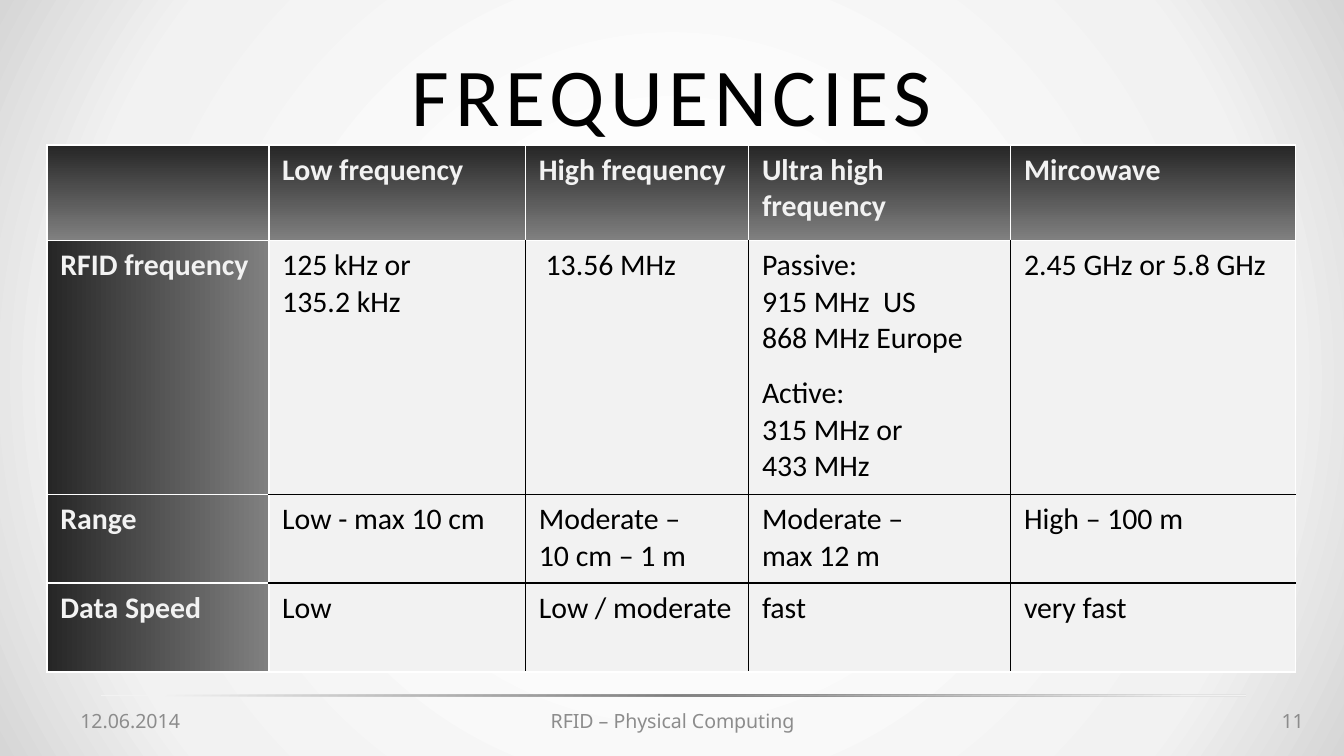
"""Build the slide that compares RFID frequency bands."""
from lxml import etree
from pptx import Presentation
from pptx import util as u
from pptx.dml.color import RGBColor
from pptx.enum import shapes, text
from pptx.oxml import ns

TITLE = "FREQUENCIES"
ROWS = [
    ["", "Low frequency", "High frequency", "Ultra high frequency", "Mircowave"],
    ["RFID frequency", "125 kHz or\n135.2 kHz", " 13.56 MHz",
     "Passive:\n915 MHz  US\n868 MHz Europe\nActive:\n315 MHz or\n433 MHz",
     "2.45 GHz or 5.8 GHz"],
    ["Range", "Low - max 10 cm", "Moderate –\n10 cm – 1 m",
     "Moderate –\nmax 12 m", "High – 100 m"],
    ["Data Speed", "Low", "Low / moderate", "fast", "very fast"],
]
WIDTHS = [1.65, 1.91, 1.66, 1.95, 2.12]
HEIGHTS = [0.71, 1.89, 0.66, 0.66]
LEFT, CENTER, RIGHT = text.PP_ALIGN.LEFT, text.PP_ALIGN.CENTER, text.PP_ALIGN.RIGHT
FOOTER = [
    ("12.06.2014", 0.5, 2.33, LEFT),
    ("RFID – Physical Computing", 3.42, 3.17, CENTER),
    ("11", 7.47, 2.33, RIGHT),
]
THEME = {
    "dark": "000000", "light": "F2F2F2", "edge": "FFFFFF", "mute": "8C8C8C",
    "head": [(0, "262626"), (100, "808080")],
    "back": [(20, "FFFFFF"), (78, "F2F2F2"), (100, "D6D6D6")],
    "rule": [(5, "F2F2F2"), (50, "808080"), (95, "F2F2F2")],
    "font": "Calibri", "small": "Noto Sans",
    "title": 44, "body": 16, "foot": 10.5, "gap": 9.8,
}
SIDES = {"L": (0, -1), "R": (0, 1), "T": (-1, 0), "B": (1, 0)}


def add(node, tag, **attrs):
    """Append a drawing element."""
    return etree.SubElement(node, ns.qn("a:" + tag), {k: str(v) for k, v in attrs.items()})


def blend(fill, node, stops, angle=None, focus=None):
    """Give a fill a linear gradient, or a circular one about a focus."""
    fill.solid()
    old = node.find(ns.qn("a:solidFill"))
    grad = etree.Element(ns.qn("a:gradFill"), rotWithShape="1")
    items = add(grad, "gsLst")
    for place, ink in stops:
        add(add(items, "gs", pos=place * 1000), "srgbClr", val=ink)
    if focus:
        rect = {k: v * 1000 for k, v in zip("ltrb", focus)}
        add(add(grad, "path", path="circle"), "fillToRect", **rect)
    else:
        add(grad, "lin", ang=angle * 60000, scaled=0)
    node.replace(old, grad)


def style(frame, font, size, ink, bold=False, align=LEFT):
    """Format all text in a frame."""
    for para in frame.paragraphs:
        para.alignment = align
        para.font.size = u.Pt(size)
        for run in para.runs:
            run.font.name, run.font.size, run.font.bold = font, u.Pt(size), bold
            run.font.color.rgb = RGBColor.from_string(ink)


def label(slide, words, box, font, size, ink, align):
    """Add a text box centred on its height."""
    frame = slide.shapes.add_textbox(*map(u.Inches, box)).text_frame
    frame.word_wrap = True
    frame.vertical_anchor = text.MSO_ANCHOR.MIDDLE
    frame.text = words
    style(frame, font, size, ink, align=align)
    return frame


def border(cell, row, col):
    """Draw black lines between body cells and white ones elsewhere."""
    props = cell._tc.get_or_add_tcPr()
    lines = []
    for side, (down, over) in SIDES.items():
        near, far = row + down, col + over
        if near < 0:
            continue
        inner = min(row, col, near, far) > 0 and near < len(ROWS) and far < len(WIDTHS)
        line = etree.Element(ns.qn("a:ln" + side), w=str(u.Pt(1)))
        add(add(line, "solidFill"), "srgbClr", val=THEME["dark" if inner else "edge"])
        lines.append(line)
    for spot, line in enumerate(lines):
        props.insert(spot, line)


def grid(slide):
    """Add the comparison table."""
    box = 0.35, 1.08, sum(WIDTHS), sum(HEIGHTS)
    table = slide.shapes.add_table(len(ROWS), len(WIDTHS), *map(u.Inches, box)).table
    table.horz_banding = False
    for col, width in zip(table.columns, WIDTHS):
        col.width = u.Inches(width)
    for r, row in enumerate(ROWS):
        table.rows[r].height = u.Inches(HEIGHTS[r])
        for c, words in enumerate(row):
            cell = table.cell(r, c)
            head = r == 0 or c == 0
            cell.text_frame.text = words
            style(cell.text_frame, THEME["font"], THEME["body"],
                  THEME["light" if head else "dark"], head)
            for para in cell.text_frame.paragraphs:
                if para.text == "Active:":
                    para.space_before = u.Pt(THEME["gap"])
            if head:
                blend(cell.fill, cell._tc.get_or_add_tcPr(), THEME["head"], 0 if r else 90)
            else:
                cell.fill.solid()
                cell.fill.fore_color.rgb = RGBColor.from_string(THEME["light"])
            border(cell, r, c)


def main():
    """Build and save the slide."""
    deck = Presentation()
    deck.slide_width = u.Inches(10)
    deck.slide_height = deck.slide_width * 9 // 16
    slide = deck.slides.add_slide(deck.slide_layouts[6])
    fill = slide.background.fill
    fill.solid()
    blend(fill, slide.element.find(".//" + ns.qn("p:bgPr")), THEME["back"], focus=(50,) * 4)

    rule = slide.shapes.add_shape(shapes.MSO_SHAPE.ROUNDED_RECTANGLE,
                                  *map(u.Inches, (0.75, 5.17, 8.52, 0.01)))
    rule.shadow.inherit = False
    rule.line.fill.background()
    blend(rule.fill, rule.element.spPr, THEME["rule"], focus=(100, 100, 0, 0))

    frame = label(slide, TITLE, (0.5, 0.23, 9, 0.94), THEME["font"],
                  THEME["title"], THEME["dark"], CENTER)
    frame.paragraphs[0].runs[0].font._element.set("spc", "300")
    grid(slide)
    for words, left, width, align in FOOTER:
        label(slide, words, (left, 5.21, width, 0.3), THEME["small"],
              THEME["foot"], THEME["mute"], align)
    deck.save("out.pptx")


if __name__ == "__main__":
    main()
